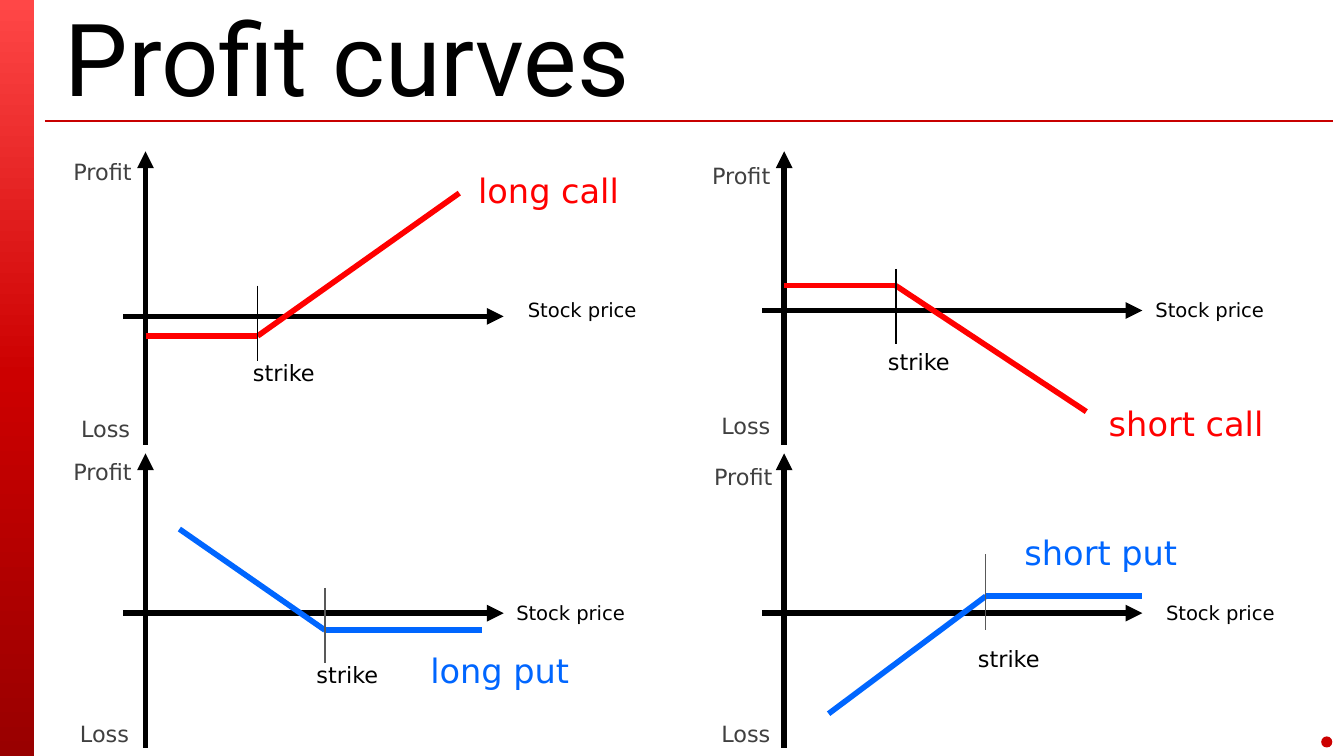
from copy import deepcopy
from dataclasses import dataclass
from itertools import pairwise

from lxml import etree
from pptx import Presentation
from pptx.dml.color import RGBColor
from pptx.enum.shapes import MSO_CONNECTOR, MSO_SHAPE
from pptx.enum.text import MSO_ANCHOR, PP_ALIGN
from pptx.oxml.ns import qn
from pptx.util import Cm, Pt

STRAIGHT = MSO_CONNECTOR.STRAIGHT
RECTANGLE, OVAL = MSO_SHAPE.RECTANGLE, MSO_SHAPE.OVAL
LEFT, RIGHT = PP_ALIGN.LEFT, PP_ALIGN.RIGHT
TOP, MIDDLE = MSO_ANCHOR.TOP, MSO_ANCHOR.MIDDLE

BLACK, GREY, DARK_GREY = "000000", "404040", "595959"
CALL_RED, PUT_BLUE = "FF0000", "0066FF"
BAND_STOPS = (("FF4747", 0), ("CC0000", 0.5), ("990000", 1))

PROFIT_AXIS_LENGTH = 5.56
PRICE_AXIS_BEFORE, PRICE_AXIS_AFTER = 0.42, 6.77
STRIKE_TICK_LENGTH = 1.43

Point = tuple[float, float]


@dataclass(frozen=True)
class ProfitCurve:
    name: str
    color: str
    tick_color: str
    axis_top: Point
    price_axis_y: float
    payoff: tuple[Point, Point, Point]
    tick_top: float
    name_at: Point
    name_width: float
    price_at: Point
    strike_at: Point
    profit_at: Point
    loss_at: Point


CURVES = (
    ProfitCurve(
        "long call", CALL_RED, BLACK, (2.75, 2.86), 5.98,
        ((2.75, 6.35), (4.87, 6.35), (8.68, 3.65)), 5.4,
        name_at=(8.77, 3.08), name_width=3.18, price_at=(9.53, 5.5),
        strike_at=(3.45, 6.66), profit_at=(0.84, 2.86), loss_at=(0.81, 7.73),
    ),
    ProfitCurve(
        "short call", CALL_RED, BLACK, (14.82, 2.86), 5.87,
        ((14.82, 5.4), (16.93, 5.4), (20.53, 7.78)), 5.08,
        name_at=(20.68, 7.49), name_width=3.45, price_at=(21.39, 5.5),
        strike_at=(15.45, 6.45), profit_at=(12.91, 2.94), loss_at=(12.91, 7.67),
    ),
    ProfitCurve(
        "long put", PUT_BLUE, DARK_GREY, (2.75, 8.57), 11.59,
        ((3.39, 10), (6.14, 11.91), (9.1, 11.91)), 11.11,
        name_at=(7.83, 12.17), name_width=3.18, price_at=(9.31, 11.23),
        strike_at=(4.65, 12.38), profit_at=(0.84, 8.54), loss_at=(0.79, 13.49),
    ),
    ProfitCurve(
        "short put", PUT_BLUE, DARK_GREY, (14.82, 8.57), 11.59,
        ((15.66, 13.49), (18.63, 11.27), (21.59, 11.27)), 10.48,
        name_at=(19.05, 9.93), name_width=3.45, price_at=(21.59, 11.23),
        strike_at=(17.15, 12.07), profit_at=(12.95, 8.63), loss_at=(12.91, 13.49),
    ),
)


def rgb(color: str) -> RGBColor:
    return RGBColor.from_string(color)


def add_text(slide, text: str, at: Point, width: float, height: float, *,
             size: float, color: str = BLACK, font: str = "DejaVu Sans",
             align=RIGHT, anchor=TOP, wrap: bool = True) -> None:
    frame = slide.shapes.add_textbox(
        Cm(at[0]), Cm(at[1]), Cm(width), Cm(height)).text_frame
    frame.word_wrap = wrap
    frame.vertical_anchor = anchor
    paragraph = frame.paragraphs[0]
    paragraph.alignment = align
    run = paragraph.add_run()
    run.text = text
    run.font.name = font
    run.font.size = Pt(size)
    run.font.color.rgb = rgb(color)


def add_line(slide, start: Point, end: Point, color: str, width: float,
             arrow_at_start: bool = False) -> None:
    connector = slide.shapes.add_connector(
        STRAIGHT, Cm(start[0]), Cm(start[1]), Cm(end[0]), Cm(end[1]))
    connector.line.color.rgb = rgb(color)
    connector.line.width = Pt(width)
    if arrow_at_start:
        outline = connector.line._get_or_add_ln()
        etree.SubElement(outline, qn("a:headEnd"), type="triangle")
    etree.SubElement(connector._element.spPr, qn("a:effectLst"))


def add_plain_shape(slide, preset, left: float, top: float,
                    width: float, height: float):
    shape = slide.shapes.add_shape(
        preset, Cm(left), Cm(top), Cm(width), Cm(height))
    shape.shadow.inherit = False
    shape.line.fill.background()
    return shape


def add_side_band(slide) -> None:
    band = add_plain_shape(slide, RECTANGLE, 0, 0, 0.64, 14.29)
    band.fill.gradient()
    band.fill.gradient_angle = 270
    stop_list = band._element.spPr.find(".//" + qn("a:gsLst"))
    stop_list.insert(1, deepcopy(stop_list[0]))
    for stop, (color, position) in zip(band.fill.gradient_stops, BAND_STOPS):
        stop.color.rgb = rgb(color)
        stop.position = position


def add_profit_curve(slide, curve: ProfitCurve) -> None:
    axis_x, axis_y = curve.axis_top
    add_line(slide, curve.axis_top, (axis_x, axis_y + PROFIT_AXIS_LENGTH),
             BLACK, 3, arrow_at_start=True)
    add_line(slide, (axis_x + PRICE_AXIS_AFTER, curve.price_axis_y),
             (axis_x - PRICE_AXIS_BEFORE, curve.price_axis_y),
             BLACK, 3, arrow_at_start=True)
    for start, end in pairwise(curve.payoff):
        add_line(slide, start, end, curve.color, 3)
    strike_x = curve.payoff[1][0]
    add_line(slide, (strike_x, curve.tick_top),
             (strike_x, curve.tick_top + STRIKE_TICK_LENGTH),
             curve.tick_color, 0.75)
    add_text(slide, "Stock price", curve.price_at, 2.75, 0.73, size=10.5)
    add_text(slide, "strike", curve.strike_at, 2.75, 0.77, size=12)
    add_text(slide, "Profit", curve.profit_at, 1.9, 0.77, size=12, color=GREY)
    add_text(slide, "Loss", curve.loss_at, 1.9, 0.77, size=12, color=GREY)
    add_text(slide, curve.name, curve.name_at, curve.name_width, 1.03,
             size=18, color=curve.color, wrap=False)


def main() -> None:
    presentation = Presentation()
    presentation.slide_width = Cm(25.4)
    presentation.slide_height = Cm(14.29)
    slide = presentation.slides.add_slide(presentation.slide_layouts[6])
    add_side_band(slide)
    add_line(slide, (0.85, 2.29), (25.2, 2.29), "C80000", 0.75)
    add_text(slide, "Profit curves", (0.97, 0.38), 24.33, 1.35, size=54,
             font="Roboto", align=LEFT, anchor=MIDDLE)
    for curve in CURVES:
        add_profit_curve(slide, curve)
    corner_dot = add_plain_shape(slide, OVAL, 24.97, 13.92, 0.21, 0.21)
    corner_dot.fill.solid()
    corner_dot.fill.fore_color.rgb = rgb("CC0000")
    presentation.save("out.pptx")


if __name__ == "__main__":
    main()
